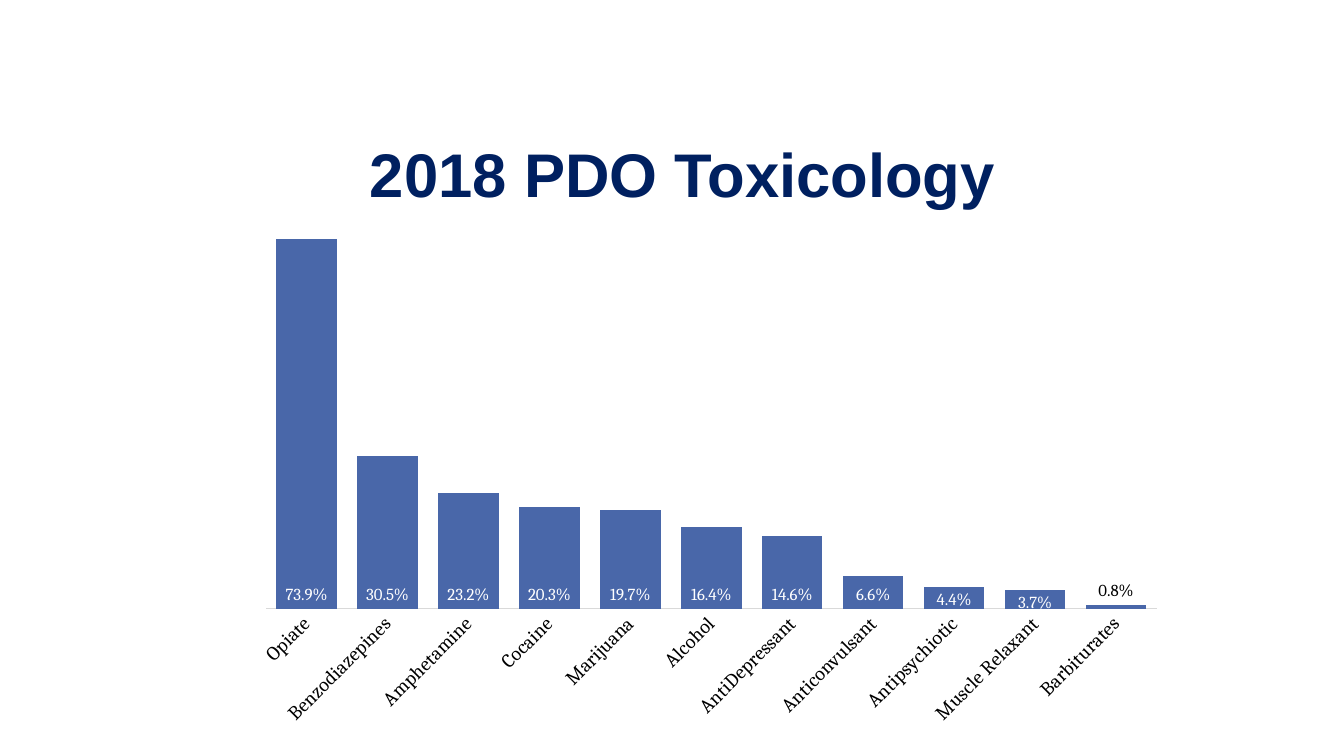
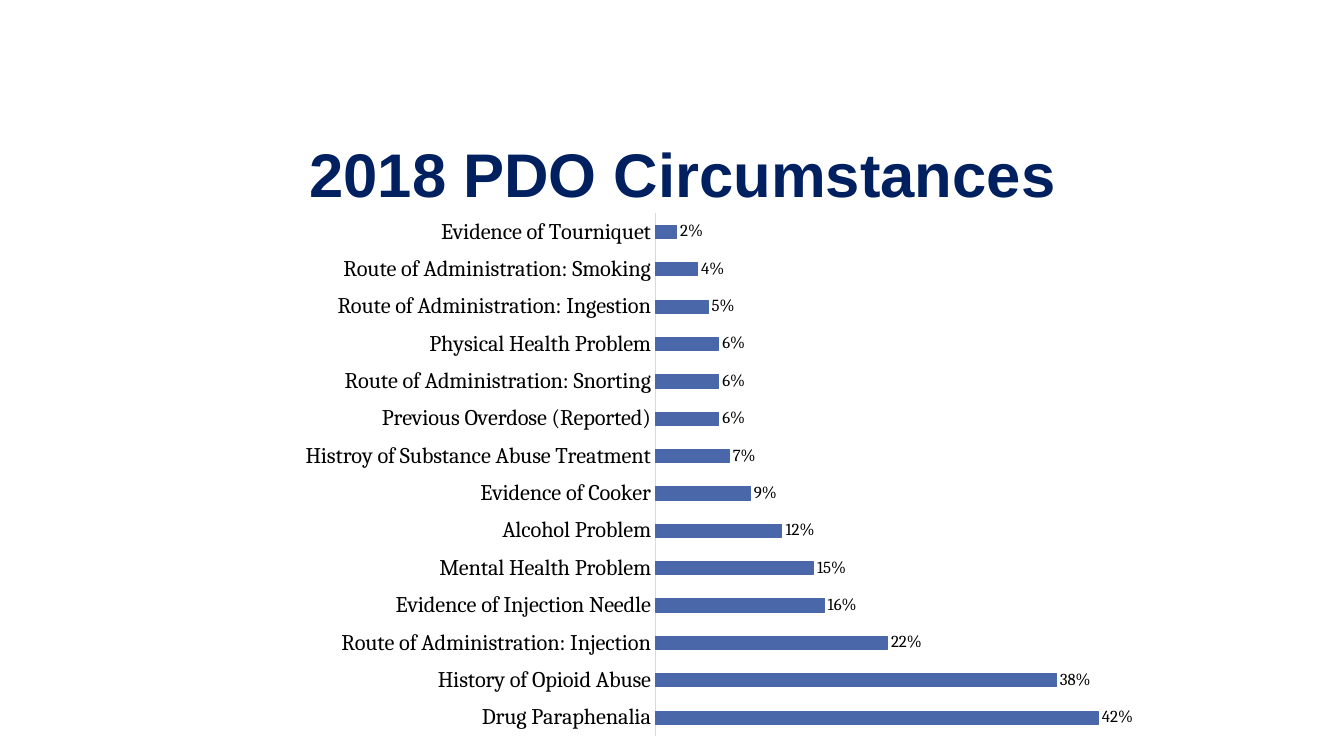
from dataclasses import dataclass, field

import pptx
import pptx.chart.data
import pptx.dml.color
import pptx.enum.chart
import pptx.enum.text
import pptx.oxml
import pptx.oxml.ns
import pptx.util

Pt = pptx.util.Pt
RGBColor = pptx.dml.color.RGBColor
ChartType = pptx.enum.chart.XL_CHART_TYPE
LabelPosition = pptx.enum.chart.XL_LABEL_POSITION

NAVY = RGBColor(0x00, 0x20, 0x60)
BAR_BLUE = RGBColor(0x49, 0x67, 0xA9)
AXIS_GRAY = RGBColor(0xD9, 0xD9, 0xD9)
BLACK = RGBColor(0x00, 0x00, 0x00)
WHITE = RGBColor(0xFF, 0xFF, 0xFF)

TITLE_FONT = "Arial"
CHART_FONT = "Cambria"
LABEL_SIZE = 12


@dataclass(frozen=True)
class Box:
    left: float
    top: float
    width: float
    height: float


@dataclass(frozen=True)
class PointLabel:
    position: LabelPosition
    color: RGBColor


@dataclass(frozen=True)
class ChartSlide:
    title: str
    chart_type: ChartType
    box: Box
    plot: Box  # inner plot area, as fractions of the chart
    values: dict[str, float]
    value_format: str
    axis_maximum: float
    category_size: float
    gap_width: int
    overlap: int
    label_position: LabelPosition
    label_color: RGBColor
    category_rotation: int = 0
    outline_width: float = 0
    point_labels: dict[int, PointLabel] = field(default_factory=dict)


TITLE_BOX = Box(54, 72.7, 867.6, 102.2)

SLIDES = [
    ChartSlide(
        title="2018 PDO Toxicology",
        chart_type=ChartType.COLUMN_CLUSTERED,
        box=Box(172.8, 141.1, 666, 384.5),
        plot=Box(0.026, 0.02, 0.955, 0.744),
        values={
            "Opiate": 0.739,
            "Benzodiazepines": 0.305,
            "Amphetamine": 0.232,
            "Cocaine": 0.203,
            "Marijuana": 0.197,
            "Alcohol": 0.164,
            "AntiDepressant": 0.146,
            "Anticonvulsant": 0.066,
            "Antipsychiotic": 0.044,
            "Muscle Relaxant": 0.037,
            "Barbiturates": 0.008,
        },
        value_format="0.0%",
        axis_maximum=0.8,
        category_size=14,
        gap_width=34,
        overlap=-27,
        label_position=LabelPosition.INSIDE_BASE,
        label_color=WHITE,
        category_rotation=-45,
        point_labels={
            8: PointLabel(LabelPosition.INSIDE_END, WHITE),
            9: PointLabel(LabelPosition.INSIDE_END, WHITE),
            10: PointLabel(LabelPosition.OUTSIDE_END, BLACK),
        },
    ),
    ChartSlide(
        title="2018 PDO Circumstances",
        chart_type=ChartType.BAR_CLUSTERED,
        box=Box(206.6, 144, 612, 388.8),
        plot=Box(0.427, 0.021, 0.554, 0.961),
        values={
            "Drug Paraphenalia": 0.42,
            "History of Opioid Abuse": 0.38,
            "Route of Administration: Injection": 0.22,
            "Evidence of Injection Needle": 0.16,
            "Mental Health Problem": 0.15,
            "Alcohol Problem": 0.12,
            "Evidence of Cooker": 0.09,
            "Histroy of Substance Abuse Treatment": 0.07,
            "Previous Overdose (Reported)": 0.06,
            "Route of Administration: Snorting": 0.06,
            "Physical Health Problem": 0.06,
            "Route of Administration: Ingestion": 0.05,
            "Route of Administration: Smoking": 0.04,
            "Evidence of Tourniquet": 0.02,
        },
        value_format="0%",
        axis_maximum=0.45,
        category_size=16,
        gap_width=182,
        overlap=0,
        label_position=LabelPosition.OUTSIDE_END,
        label_color=BLACK,
        outline_width=0.25,
    ),
]


def place(box: Box) -> tuple[int, int, int, int]:
    """Turn a box in points into slide coordinates."""
    return Pt(box.left), Pt(box.top), Pt(box.width), Pt(box.height)


def set_font(font, *, name: str, size: float, color: RGBColor, bold: bool = False) -> None:
    font.name = name
    font.size = Pt(size)
    font.bold = bold
    font.color.rgb = color


def add_text(slide, text: str, box: Box, *, name: str, size: float,
             color: RGBColor, bold: bool = False) -> None:
    """Add centred text in the middle of a box."""
    frame = slide.shapes.add_textbox(*place(box)).text_frame
    frame.word_wrap = True
    frame.vertical_anchor = pptx.enum.text.MSO_ANCHOR.MIDDLE
    paragraph = frame.paragraphs[0]
    paragraph.alignment = pptx.enum.text.PP_ALIGN.CENTER
    run = paragraph.add_run()
    run.text = text
    set_font(run.font, name=name, size=size, color=color, bold=bold)


def set_plot_layout(chart, plot: Box) -> None:
    """Fix the inner plot area, without axis labels, within the chart."""
    plot_area = chart.element.xpath("c:chart/c:plotArea")[0]
    for layout in plot_area.xpath("c:layout"):
        plot_area.remove(layout)
    plot_area.insert(0, pptx.oxml.parse_xml(
        f'<c:layout {pptx.oxml.ns.nsdecls("c")}><c:manualLayout>'
        '<c:layoutTarget val="inner"/><c:xMode val="edge"/><c:yMode val="edge"/>'
        f'<c:x val="{plot.left}"/><c:y val="{plot.top}"/>'
        f'<c:w val="{plot.width}"/><c:h val="{plot.height}"/>'
        '</c:manualLayout></c:layout>'))


def format_axes(chart, content: ChartSlide) -> None:
    category_axis = chart.category_axis
    category_axis.major_tick_mark = pptx.enum.chart.XL_TICK_MARK.NONE
    category_axis.format.line.color.rgb = AXIS_GRAY
    category_axis.format.line.width = Pt(0.75)
    set_font(category_axis.tick_labels.font, name=CHART_FONT,
             size=content.category_size, color=BLACK)
    if content.category_rotation:
        body = chart.element.xpath(".//c:catAx/c:txPr/a:bodyPr")[0]
        body.set("rot", str(content.category_rotation * 60000))

    value_axis = chart.value_axis
    value_axis.visible = False
    value_axis.has_major_gridlines = False
    value_axis.minimum_scale = 0
    value_axis.maximum_scale = content.axis_maximum


def format_bars(chart, content: ChartSlide) -> None:
    plot = chart.plots[0]
    plot.vary_by_categories = False
    plot.gap_width = content.gap_width
    plot.overlap = content.overlap

    series = plot.series[0]
    series.format.fill.solid()
    series.format.fill.fore_color.rgb = BAR_BLUE
    if content.outline_width:
        series.format.line.color.rgb = BAR_BLUE
        series.format.line.width = Pt(content.outline_width)

    labels = series.data_labels
    labels.show_value = True
    labels.number_format = content.value_format
    labels.number_format_is_linked = False
    labels.position = content.label_position
    set_font(labels.font, name=CHART_FONT, size=LABEL_SIZE, color=content.label_color)
    for index, point_label in content.point_labels.items():
        label = series.points[index].data_label
        set_font(label.font, name=CHART_FONT, size=LABEL_SIZE, color=point_label.color)
        label.position = point_label.position


def add_bar_chart(slide, content: ChartSlide) -> None:
    data = pptx.chart.data.CategoryChartData(number_format=content.value_format)
    data.categories = list(content.values)
    data.add_series("Series 1", list(content.values.values()))
    chart = slide.shapes.add_chart(content.chart_type, *place(content.box), data).chart
    chart.has_title = False
    chart.has_legend = False
    set_font(chart.font, name=CHART_FONT, size=10, color=BLACK)
    format_axes(chart, content)
    format_bars(chart, content)
    set_plot_layout(chart, content.plot)


def main() -> None:
    presentation = pptx.Presentation()
    presentation.slide_width = Pt(960)
    presentation.slide_height = Pt(540)
    blank_layout = presentation.slide_layouts[6]
    for content in SLIDES:
        slide = presentation.slides.add_slide(blank_layout)
        add_text(slide, content.title, TITLE_BOX, name=TITLE_FONT, size=44,
                 color=NAVY, bold=True)
        add_bar_chart(slide, content)
    presentation.save("out.pptx")


if __name__ == "__main__":
    main()
